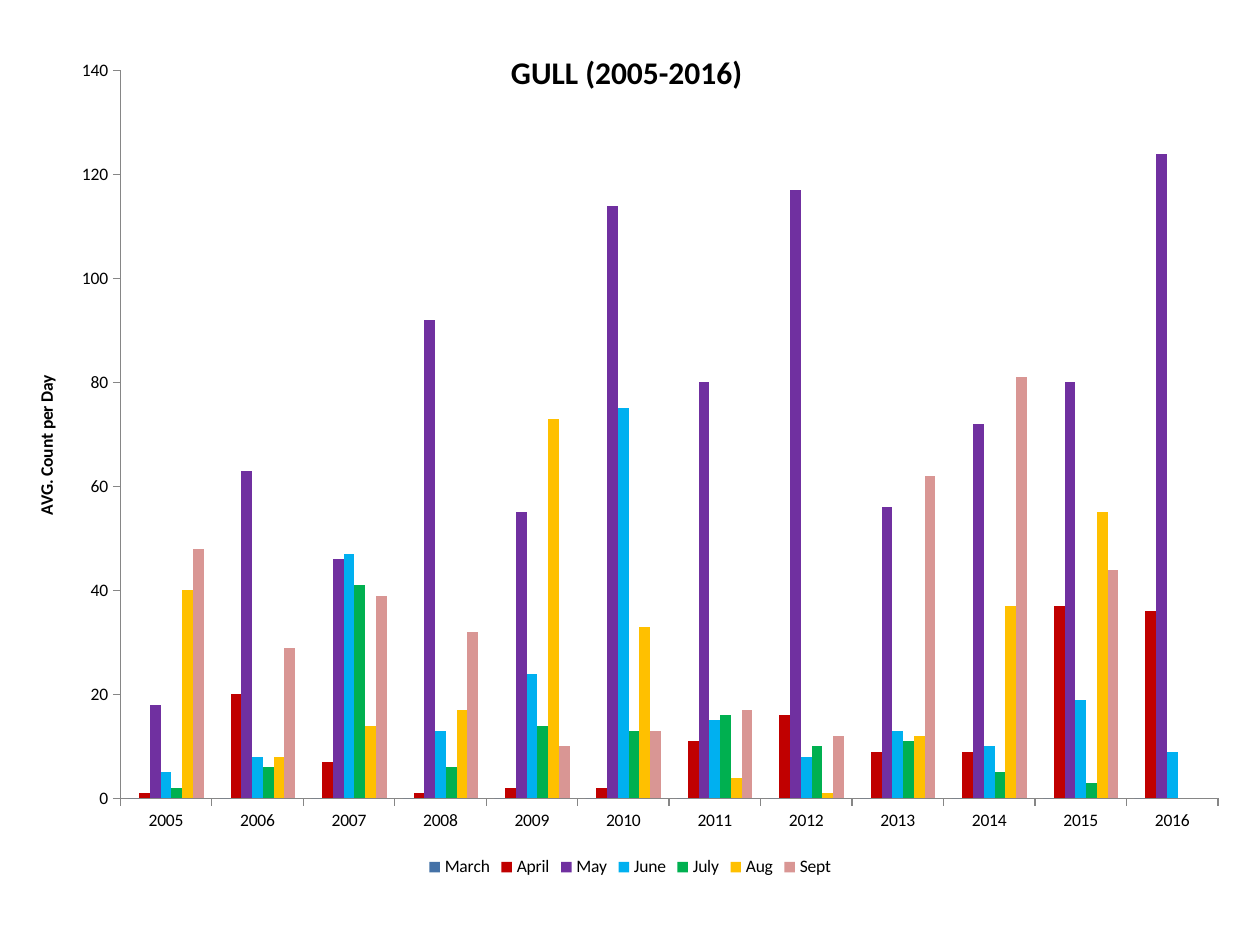
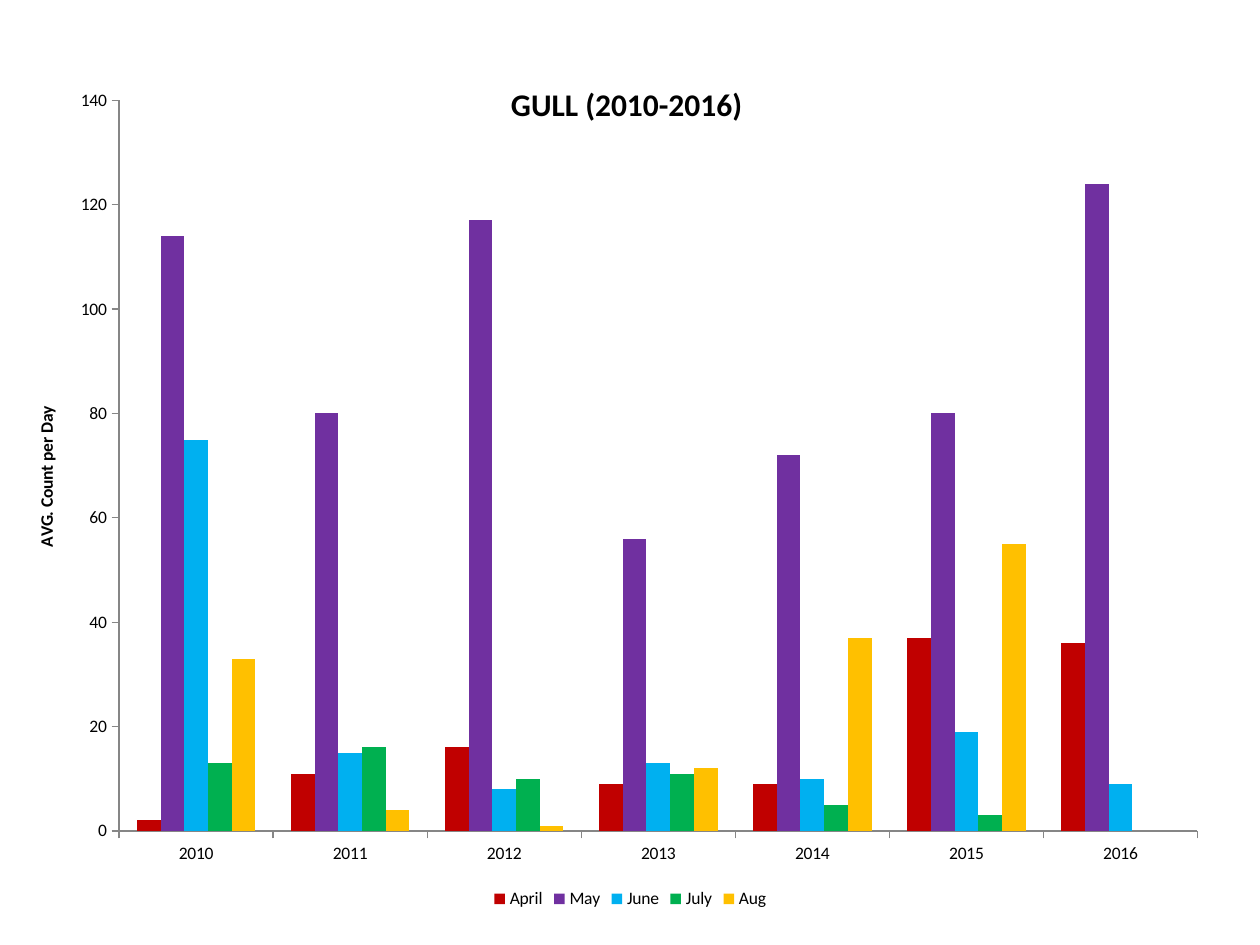
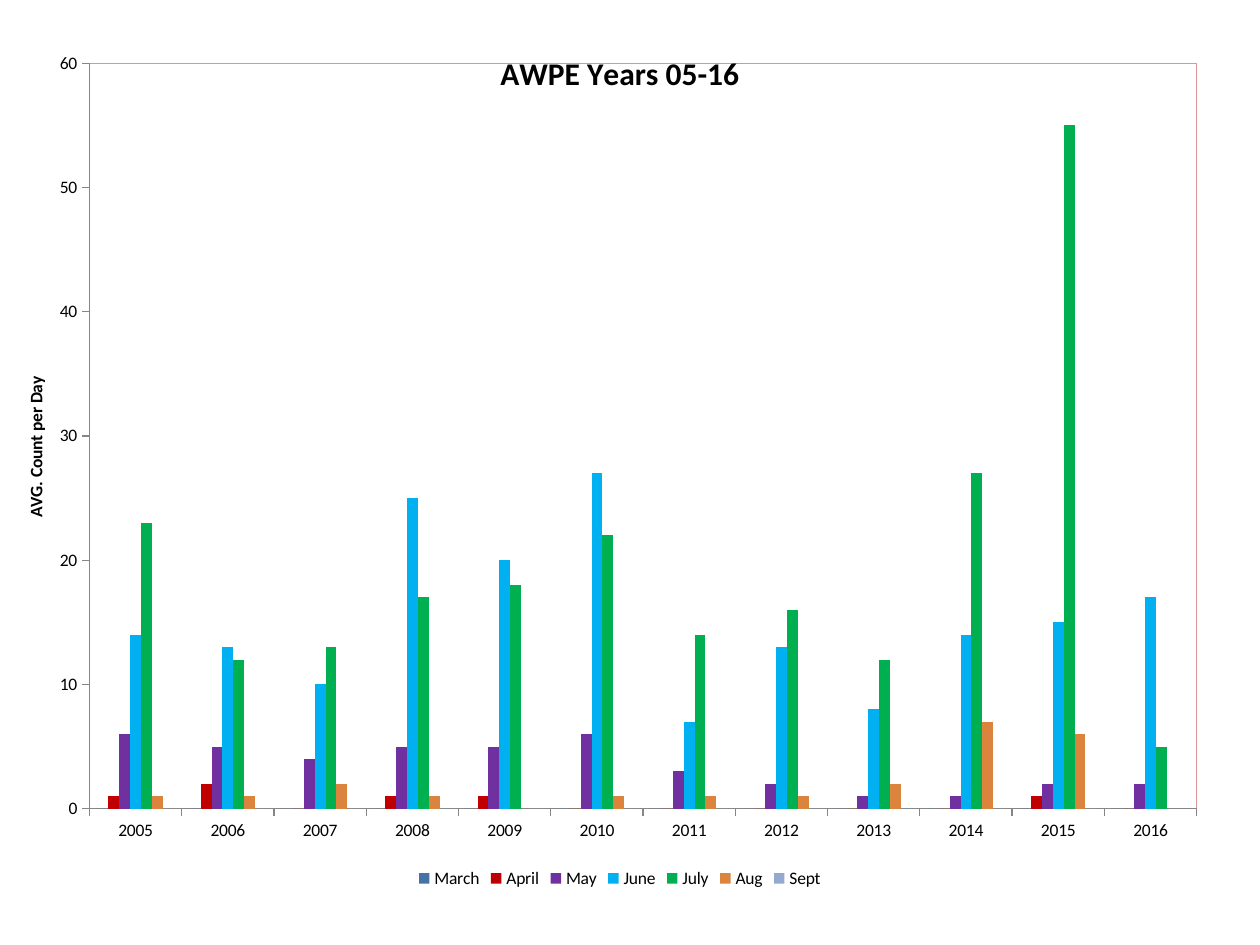
from dataclasses import dataclass

from lxml import etree
from pptx import Presentation
from pptx import util as u
from pptx.chart import chart as ch
from pptx.chart import data as cd
from pptx.dml import color as dml
from pptx.enum import chart as ce
from pptx.oxml import ns
from pptx.text import text as tx

FONT = "Calibri"
COLORS = {
    "text": "000000",
    "axis": "868686",
    "frame": "D99694",
    "March": "4572A7",
    "April": "C00000",
    "May": "7030A0",
    "June": "00B0F0",
    "July": "00B050",
    "Aug": "FFC000",
    "Sept": "D99694",
}
PELICAN_COLORS = COLORS | {"Aug": "DB843D", "Sept": "93A9CF"}

YEARS = [str(year) for year in range(2005, 2017)]
GULLS = {
    "March": [0] * 12,
    "April": [1, 20, 7, 1, 2, 2, 11, 16, 9, 9, 37, 36],
    "May": [18, 63, 46, 92, 55, 114, 80, 117, 56, 72, 80, 124],
    "June": [5, 8, 47, 13, 24, 75, 15, 8, 13, 10, 19, 9],
    "July": [2, 6, 41, 6, 14, 13, 16, 10, 11, 5, 3, None],
    "Aug": [40, 8, 14, 17, 73, 33, 4, 1, 12, 37, 55, None],
    "Sept": [48, 29, 39, 32, 10, 13, 17, 12, 62, 81, 44, None],
}
PELICANS = {
    "March": [0] * 12,
    "April": [1, 2, 0, 1, 1, 0, 0, 0, 0, 0, 1, 0],
    "May": [6, 5, 4, 5, 5, 6, 3, 2, 1, 1, 2, 2],
    "June": [14, 13, 10, 25, 20, 27, 7, 13, 8, 14, 15, 17],
    "July": [23, 12, 13, 17, 18, 22, 14, 16, 12, 27, 55, 5],
    "Aug": [1, 1, 2, 1, 0, 1, 1, 1, 2, 7, 6, None],
    "Sept": [0] * 11 + [None],
}
RECENT = YEARS.index("2010")
RECENT_MONTHS = ("April", "May", "June", "July", "Aug")


@dataclass(frozen=True)
class CountChart:
    heading: str
    years: list[str]
    counts: dict[str, list[int | None]]
    left: float
    top: float
    height: float
    plot: tuple[float, float, float, float]
    maximum: int
    step: int
    palette: dict[str, str]
    framed: bool = False


COUNT_CHARTS = [
    CountChart("GULL (2005-2016) ", YEARS, GULLS, 0.64, 0.43, 17.35,
               (0.074, 0.057, 0.917, 0.846), 140, 20, COLORS),
    CountChart("GULL (2010-2016) ", YEARS[RECENT:],
               {month: GULLS[month][RECENT:] for month in RECENT_MONTHS},
               0.64, 1.07, 17.35,
               (0.073, 0.055, 0.901, 0.849), 140, 20, COLORS),
    CountChart("AWPE Years 05-16", YEARS, PELICANS, 0.43, 0.43, 17.58,
               (0.057, 0.048, 0.925, 0.855), 60, 10, PELICAN_COLORS, True),
]


def rgb(hex_color: str) -> dml.RGBColor:
    return dml.RGBColor.from_string(hex_color)


def write(frame: tx.TextFrame, text: str, *, size: float, bold: bool = True,
          color: str = COLORS["text"]) -> None:
    run = frame.paragraphs[0].add_run()
    run.text = text
    run.font.name = FONT
    run.font.size = u.Pt(size)
    run.font.bold = bold
    run.font.color.rgb = rgb(color)


def place_plot(chart: ch.Chart, box: tuple[float, float, float, float]) -> None:
    plot_area = chart._chartSpace.find(".//" + ns.qn("c:plotArea"))
    for automatic in plot_area.findall(ns.qn("c:layout")):
        plot_area.remove(automatic)
    layout = etree.Element(ns.qn("c:layout"))
    manual = etree.SubElement(layout, ns.qn("c:manualLayout"))
    settings = [("layoutTarget", "inner"), ("xMode", "edge"), ("yMode", "edge"),
                *zip("xywh", box)]
    for tag, value in settings:
        etree.SubElement(manual, ns.qn(f"c:{tag}"), val=str(value))
    plot_area.insert(0, layout)


def frame_plot(chart: ch.Chart, color: str) -> None:
    plot_area = chart._chartSpace.find(".//" + ns.qn("c:plotArea"))
    properties = etree.SubElement(plot_area, ns.qn("c:spPr"))
    etree.SubElement(properties, ns.qn("a:noFill"))
    line = etree.SubElement(properties, ns.qn("a:ln"), w=str(u.Pt(0.75)))
    fill = etree.SubElement(line, ns.qn("a:solidFill"))
    etree.SubElement(fill, ns.qn("a:srgbClr"), val=color)


def format_axes(chart: ch.Chart, maximum: int, step: int) -> None:
    counts = chart.value_axis
    for axis in (chart.category_axis, counts):
        axis.has_major_gridlines = False
        axis.major_tick_mark = ce.XL_TICK_MARK.OUTSIDE
        axis.minor_tick_mark = ce.XL_TICK_MARK.NONE
        axis.format.line.color.rgb = rgb(COLORS["axis"])
        axis.format.line.width = u.Pt(0.75)
    counts.minimum_scale = 0
    counts.maximum_scale = maximum
    counts.major_unit = step
    counts.tick_labels.number_format = "0"
    counts.tick_labels.number_format_is_linked = False
    write(counts.axis_title.text_frame, "AVG. Count per Day", size=10)
    body = counts.axis_title._element.find(".//" + ns.qn("a:bodyPr"))
    body.set("rot", "-5400000")
    body.set("vert", "horz")


def add_count_slide(deck: Presentation, item: CountChart) -> None:
    slide = deck.slides.add_slide(deck.slide_layouts[6])
    data = cd.CategoryChartData(number_format="0")
    data.categories = item.years
    for month, values in item.counts.items():
        data.add_series(month, values)
    chart = slide.shapes.add_chart(
        ce.XL_CHART_TYPE.COLUMN_CLUSTERED, u.Cm(item.left), u.Cm(item.top),
        u.Cm(24.13), u.Cm(item.height), data).chart

    chart.font.name = FONT
    chart.font.size = u.Pt(10)
    chart.font.color.rgb = rgb(COLORS["text"])
    chart.has_title = True
    write(chart.chart_title.text_frame, item.heading, size=18)
    chart.has_legend = True
    chart.legend.position = ce.XL_LEGEND_POSITION.BOTTOM
    chart.legend.include_in_layout = False

    columns = chart.plots[0]
    columns.gap_width = 150
    columns.vary_by_categories = False
    for month in columns.series:
        month.invert_if_negative = False
        month.format.fill.solid()
        month.format.fill.fore_color.rgb = rgb(item.palette[month.name])

    format_axes(chart, item.maximum, item.step)
    place_plot(chart, item.plot)
    if item.framed:
        frame_plot(chart, COLORS["frame"])


def main() -> None:
    deck = Presentation()
    deck.slide_width = u.Cm(25.4)
    deck.slide_height = u.Cm(19.05)
    for item in COUNT_CHARTS:
        add_count_slide(deck, item)
    deck.save("out.pptx")


if __name__ == "__main__":
    main()
